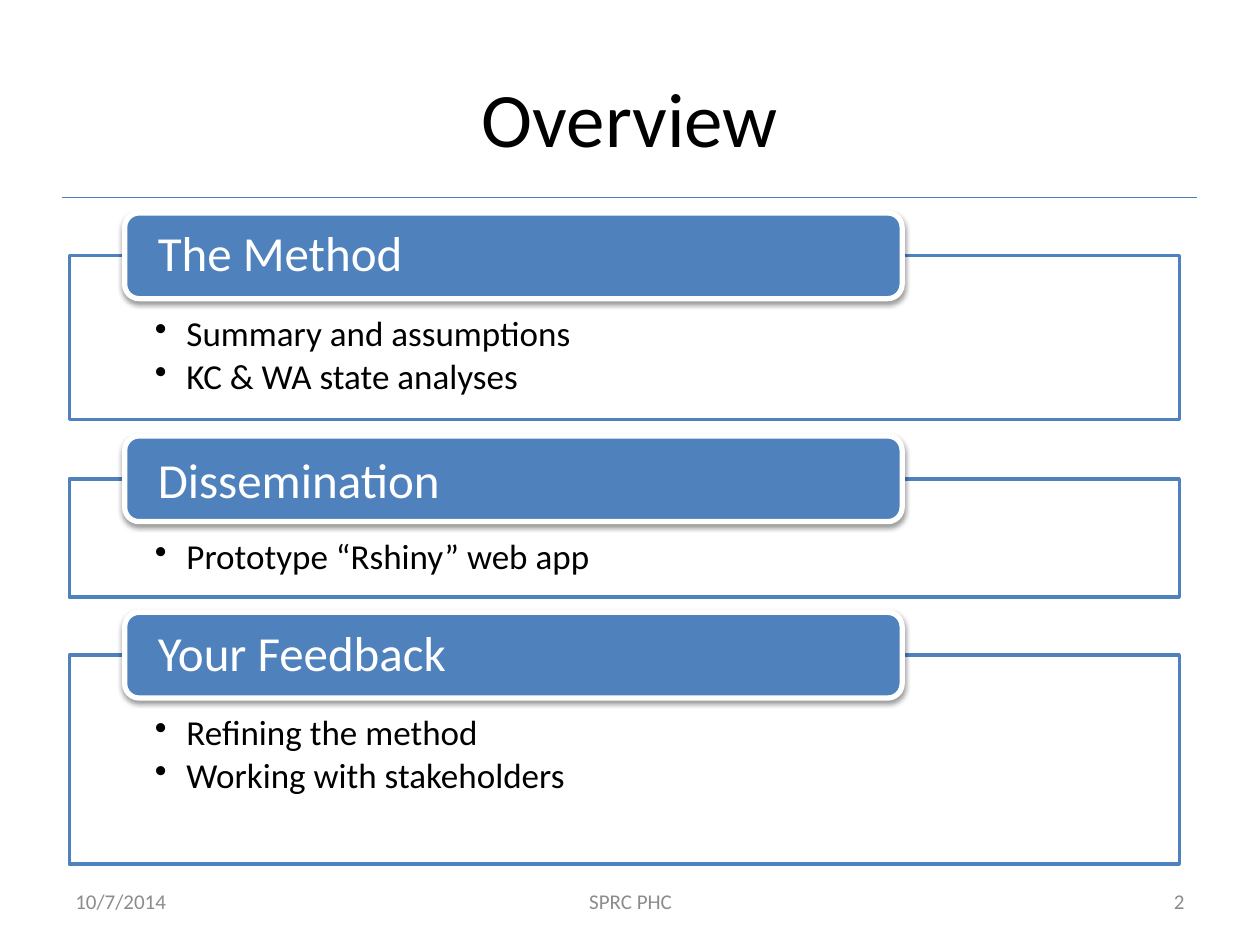
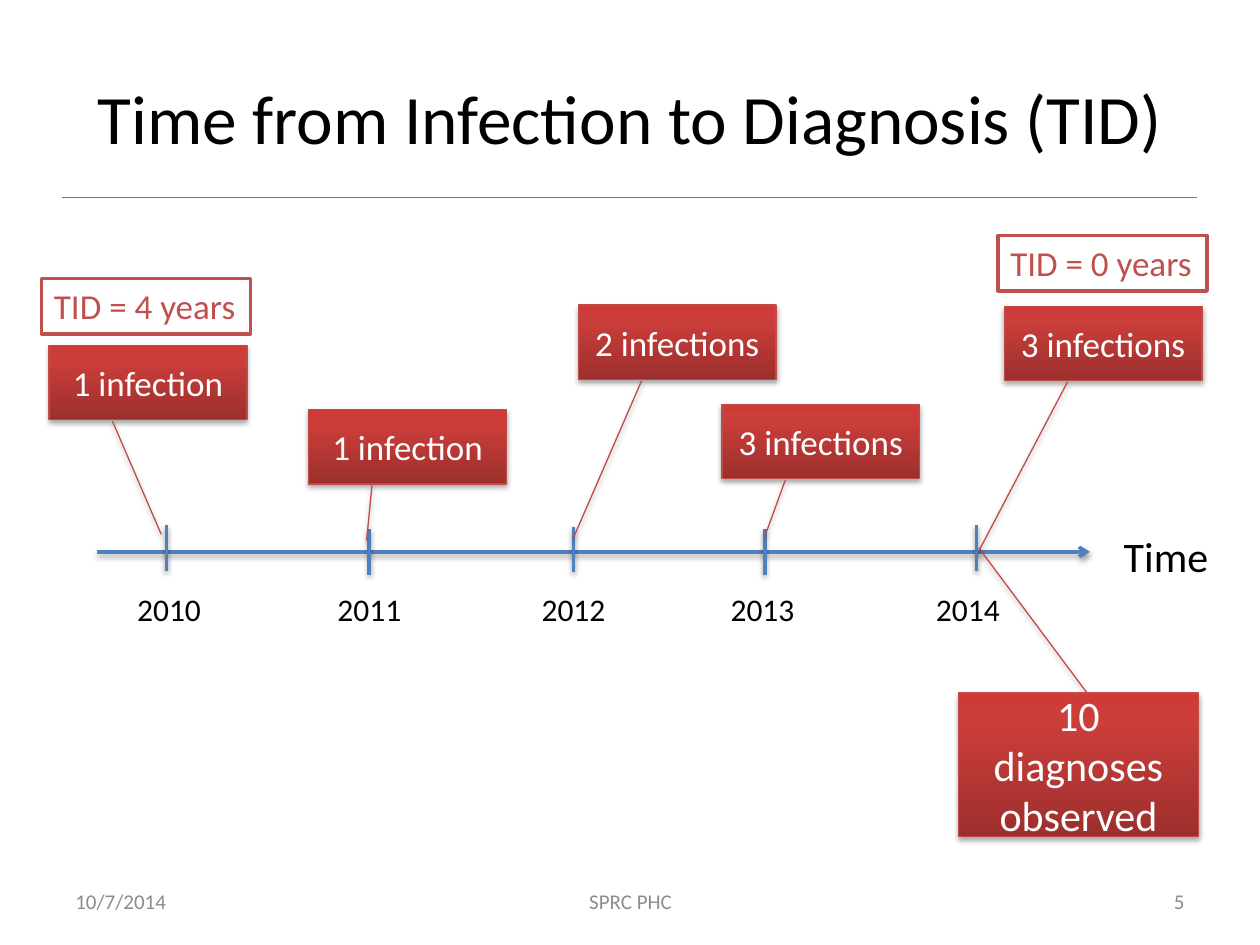
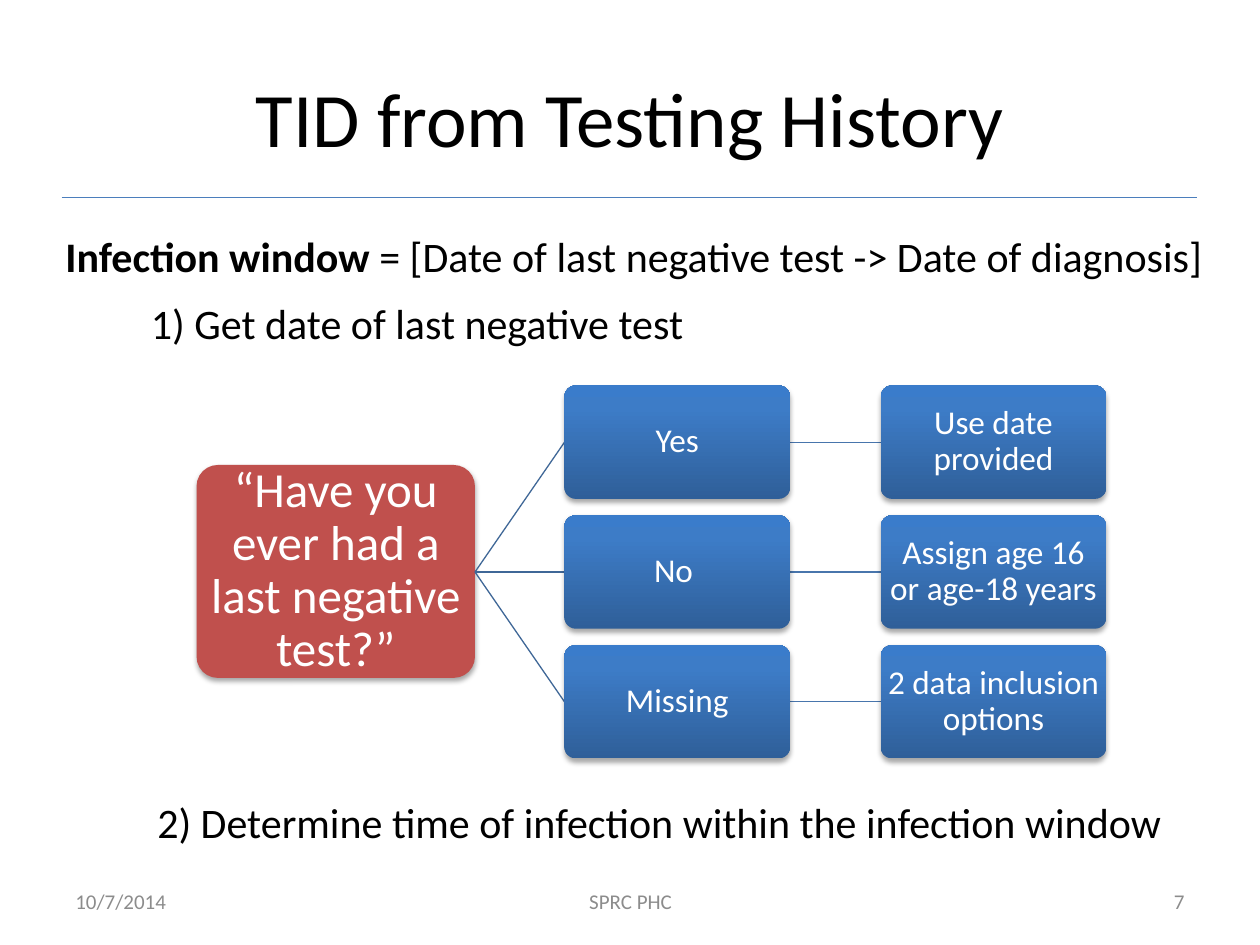
from pptx import Presentation
from pptx.dml.color import RGBColor
from pptx.enum.shapes import MSO_CONNECTOR, MSO_SHAPE
from pptx.enum.text import MSO_ANCHOR, MSO_AUTO_SIZE, PP_ALIGN
from pptx.oxml.ns import qn
from pptx.util import Inches, Pt
from lxml import etree

# Shared style
FONT = "Calibri"
BLACK, WHITE, GRAY = "000000", "FFFFFF", "8C8C8C"
BLUE, RED = "4F81BD", "C0504D"
RULE, LINK, LEAF = "4B7EBC", "3F6797", "4875AC"
EDGE = "BF4C48"
BLUES = [(0, "2F5F99"), (80, "3D7CC7"), (100, "3A7CCB")]
REDS = [(0, "9C2F2D"), (80, "CB3E3A"), (100, "CE3B37")]
SOFT = (38, 1.6)   # shadow opacity in percent, distance in points
DEEP = (35, 1.8)
INSET = (0.1, 0.05, 0.1, 0.05)

LEFT, MID, RIGHT = PP_ALIGN.LEFT, PP_ALIGN.CENTER, PP_ALIGN.RIGHT
TOP, CENTER = MSO_ANCHOR.TOP, MSO_ANCHOR.MIDDLE
RECT, ROUND = MSO_SHAPE.RECTANGLE, MSO_SHAPE.ROUNDED_RECTANGLE
CALLOUT = MSO_SHAPE.LINE_CALLOUT_1
STRAIGHT = MSO_CONNECTOR.STRAIGHT
GROW = MSO_AUTO_SIZE.SHAPE_TO_FIT_TEXT


def color(code):
    return RGBColor.from_string(code)


def sub(node, tag, **attrs):
    """Append a child element with the given attributes."""
    child = etree.SubElement(node, qn(tag))
    for key, val in attrs.items():
        child.set(key, str(val))
    return child


# Elements
def shade(item, kind):
    """Give a shape or line a downward shadow, or none at all."""
    props = item._element.spPr
    effects = props.find(qn("a:effectLst"))
    if effects is None:
        effects = sub(props, "a:effectLst")
    if kind:
        alpha, dist = kind
        drop = sub(effects, "a:outerShdw", blurRad=Pt(3.1), dist=Pt(dist),
                   dir=5400000, rotWithShape=0)
        tone = sub(drop, "a:srgbClr", val=BLACK)
        sub(tone, "a:alpha", val=alpha * 1000)


def paint(shape, fill):
    """Fill with one colour, or with a list of gradient stops."""
    if isinstance(fill, str):
        shape.fill.solid()
        shape.fill.fore_color.rgb = color(fill)
        return
    shape.fill.gradient()
    shape.fill.gradient_angle = 90
    stops = shape._element.spPr.find(".//" + qn("a:gsLst"))
    for old in list(stops):
        stops.remove(old)
    for pos, code in fill:
        stop = sub(stops, "a:gs", pos=pos * 1000)
        sub(stop, "a:srgbClr", val=code)


def write(shape, lines, size, code, align=LEFT, anchor=TOP, inset=INSET,
          wrap=True, grow=False, pitch=None, after=0, bullet=False):
    """Put paragraphs in a shape; each is a string or a list of (text, bold)."""
    frame = shape.text_frame
    frame.word_wrap = wrap
    frame.vertical_anchor = anchor
    if grow:
        frame.auto_size = GROW
    (frame.margin_left, frame.margin_top,
     frame.margin_right, frame.margin_bottom) = map(Inches, inset)
    for num, line in enumerate(lines):
        para = frame.add_paragraph() if num else frame.paragraphs[0]
        para.alignment = align
        para.space_after = Pt(after)
        if pitch:
            para.line_spacing = pitch
        if bullet:
            props = para._p.get_or_add_pPr()
            props.set("marL", str(Inches(0.25)))
            props.set("indent", str(Inches(-0.25)))
            sub(props, "a:buChar", char="•")
        for words, bold in [(line, False)] if isinstance(line, str) else line:
            run = para.add_run()
            run.text = words
            font = run.font
            font.name, font.size, font.bold = FONT, Pt(size), bold
            font.color.rgb = color(code)


def text(slide, at, lines, size, code=BLACK, **opts):
    box = slide.shapes.add_textbox(*map(Inches, at))
    write(box, lines, size, code, **opts)


def label(slide, at, line, size):
    text(slide, at, [line], size, wrap=False, grow=True)


def block(slide, kind, at, fill, edge=None, width=0.75, shadow=None):
    shape = slide.shapes.add_shape(kind, *map(Inches, at))
    paint(shape, fill)
    if edge:
        shape.line.color.rgb = color(edge)
        shape.line.width = Pt(width)
    else:
        shape.line.fill.background()
    shape.shadow.inherit = False
    shade(shape, shadow)
    return shape


def stroke(slide, start, end, code, width=0.75, shadow=None, arrow=False):
    line = slide.shapes.add_connector(STRAIGHT, *map(Inches, start + end))
    line.line.color.rgb = color(code)
    line.line.width = Pt(width)
    if arrow:
        sub(line.line._get_or_add_ln(), "a:tailEnd", type="arrow")
    shade(line, shadow)


def panel(slide, top, height, head, items, pitch):
    """Outlined list with a heading tab over its upper edge."""
    body = block(slide, RECT, (0.55, top, 8.81, height), WHITE, BLUE, 2)
    write(body, items, 20, BLACK, inset=(0.68, 0.48, 0.68, 0.16),
          pitch=0.9, after=3, bullet=True)
    tab = block(slide, ROUND, (0.99, top - 0.34, 6.17, 0.68), BLUE, WHITE, 3, SOFT)
    write(tab, [head], 28, WHITE, anchor=CENTER, inset=(0.23, 0, 0.23, 0),
          pitch=pitch)


def callout(slide, at, root, tip, line, size):
    """Red box; root is relative to the box, tip is a point on the slide."""
    left, top, wide, high = at
    shape = block(slide, CALLOUT, at, REDS, EDGE, shadow=DEEP)
    spots = (root[1], root[0], (tip[1] - top) / high, (tip[0] - left) / wide)
    for num, spot in enumerate(spots):
        shape.adjustments[num] = spot
    write(shape, [line], size, WHITE, align=MID, anchor=CENTER)


def badge(slide, left, top, line):
    shape = block(slide, RECT, (left, top, 1.66, 0.44), WHITE, RED, 2)
    write(shape, [line], 20, RED, wrap=False, grow=True)


def node(slide, at, line, size, fill, pad):
    shape = block(slide, ROUND, at, fill, shadow=DEEP)
    shape.adjustments[0] = 0.1
    write(shape, [line], size, WHITE, align=MID, anchor=CENTER,
          inset=(pad,) * 4, pitch=0.9)


def start(deck, title, page, size=44):
    """New slide with title, rule and footer."""
    slide = deck.slides.add_slide(deck.slide_layouts[6])
    stroke(slide, (0.49, 1.57), (9.5, 1.57), RULE)
    text(slide, (0.5, 0.3, 9, 1.25), [title], size, align=MID, anchor=CENTER)
    for left, wide, line, align in ((0.5, 2.33, "10/7/2014", LEFT),
                                    (3.42, 3.17, "SPRC PHC", MID),
                                    (7.17, 2.33, page, RIGHT)):
        text(slide, (left, 6.95, wide, 0.4), [line], 12, GRAY,
             align=align, anchor=CENTER)
    return slide


# Slides
def overview(deck):
    slide = start(deck, "Overview", "2")
    panel(slide, 2.03, 1.3, "The Method",
          ["Summary and assumptions", "KC & WA state analyses"], 0.9)
    panel(slide, 3.8, 0.94, "Dissemination", ["Prototype “Rshiny” web app"], 1)
    panel(slide, 5.2, 1.66, "Your Feedback",
          ["Refining the method", "Working with stakeholders"], 0.9)


def timeline(deck):
    slide = start(deck, "Time from Infection to Diagnosis (TID)", "5", 39.6)

    # Axis
    stroke(slide, (0.77, 4.38), (8.65, 4.38), BLUE, 2, SOFT, arrow=True)
    label(slide, (8.82, 4.16, 0.88, 0.37), "Time", 24)
    callout(slide, (7.61, 5.5, 1.9, 1.14), (0.54, 0.01), (7.77, 4.35),
            "10 diagnoses observed", 24)

    # Years: tick x and y, label x, box x and y, tip of its leader, words
    years = (
        ("2010", 1.32, 4.17, 0.99, 0.39, 2.74, (1.28, 4.24), "1 infection"),
        ("2011", 2.93, 4.2, 2.58, 2.45, 3.25, (2.91, 4.29), "1 infection"),
        ("2012", 4.55, 4.18, 4.2, 4.59, 2.42, (4.55, 4.27), "2 infections"),
        ("2013", 6.07, 4.2, 5.7, 5.73, 3.21, (6.07, 4.26), "3 infections"),
        ("2014", 7.75, 4.17, 7.33, 7.97, 2.43, (7.77, 4.37), "3 infections"),
    )
    for year, tick, top, left, box, high, tip, line in years:
        stroke(slide, (tick, top), (tick, top + 0.36), BLUE, 2, SOFT)
        label(slide, (left, 4.63, 0.71, 0.3), year, 18)
        callout(slide, (box, high, 1.57, 0.59), (0.32, 1.02), tip, line, 20)

    badge(slide, 0.33, 2.21, "TID = 4 years")
    badge(slide, 7.92, 1.87, "TID = 0 years")


def history(deck):
    slide = start(deck, "TID from Testing History", "7")

    # Question, answers and actions
    hub = (3.77, 4.54)
    node(slide, (1.56, 3.69, 2.21, 1.69), "“Have you ever had a last negative test?”",
         28, RED, 0.02)
    rows = (("Yes", "Use date provided"),
            ("No ", "Assign age 16 or age-18 years"),
            ("Missing", "2 data inclusion options"))
    for num, (reply, act) in enumerate(rows):
        top = 3.06 + 1.03 * num
        mid = top + 0.45
        stroke(slide, hub, (4.48, mid), LINK)
        stroke(slide, (6.27, mid), (6.99, mid), LEAF)
        for left, line in ((4.48, reply), (6.99, act)):
            node(slide, (left, top, 1.79, 0.9), line, 19, BLUES, 0.01)

    # Steps
    label(slide, (0.42, 1.78, 9.51, 0.5),
          [("Infection window ", True),
           ("= [Date of last negative test -> Date of diagnosis]", False)], 24)
    label(slide, (1.1, 2.31, 4.5, 0.5), "1) Get date of last negative test", 24)
    label(slide, (1.15, 6.27, 8.28, 0.5),
          "2) Determine time of infection within the infection window", 24)


def main():
    deck = Presentation()
    deck.slide_width, deck.slide_height = Inches(10), Inches(7.5)
    overview(deck)
    timeline(deck)
    history(deck)
    deck.save("out.pptx")


if __name__ == "__main__":
    main()
